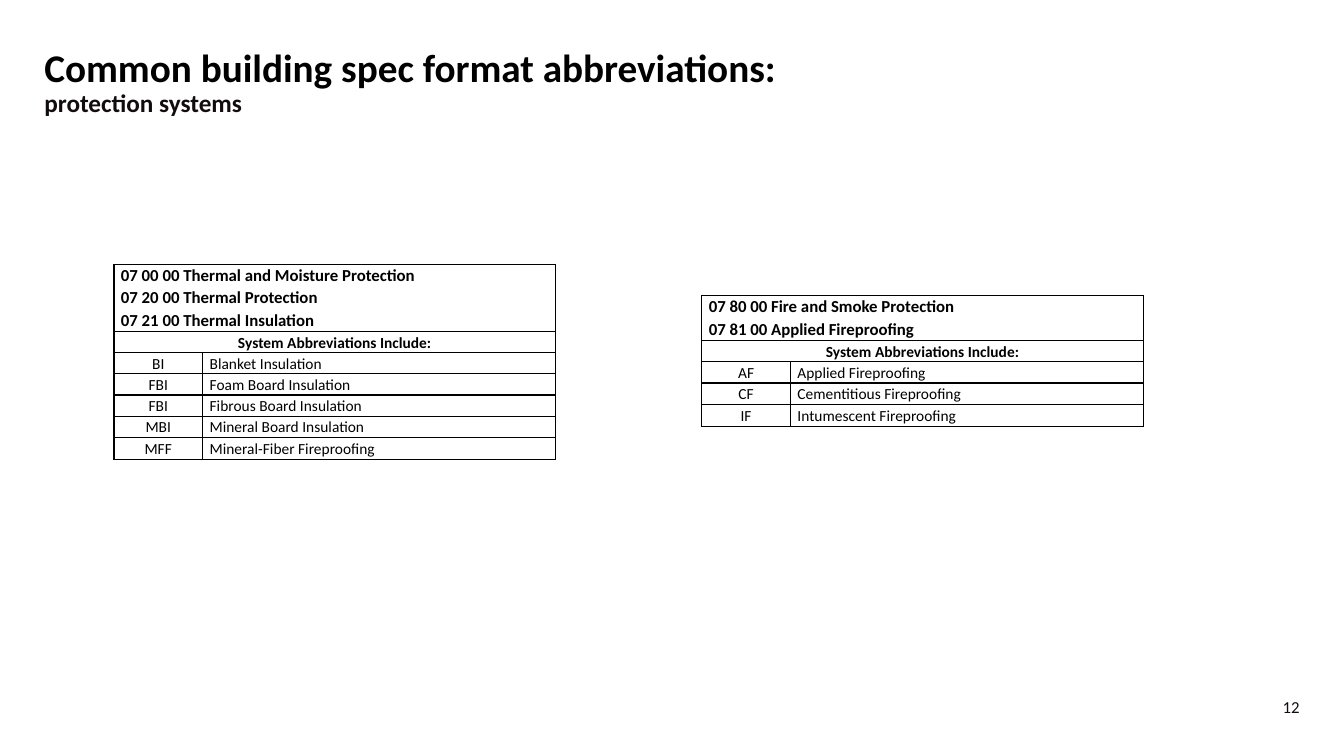
from lxml.etree import SubElement
from pptx import Presentation
from pptx.dml.color import RGBColor
from pptx.enum.text import MSO_ANCHOR as Anchor, PP_ALIGN as Align
from pptx.oxml import parse_xml
from pptx.oxml.ns import nsdecls, qn
from pptx.util import Inches, Pt

BLACK = "000000"
INK = "130C0E"


def color(hex_value):
    return RGBColor.from_string(hex_value)


class SlideBuilder:
    font_name = "Calibri"
    columns = (0.88, 3.5)
    cell_margin = 0.07

    def __init__(self, presentation):
        self.slide = presentation.slides.add_slide(presentation.slide_layouts[6])

    def run(self, paragraph, text, size, hex_value=BLACK, bold=False):
        run = paragraph.add_run()
        run.text = text
        run.font.name = self.font_name
        run.font.size = Pt(size)
        run.font.bold = bold
        run.font.color.rgb = color(hex_value)

    def text_box(self, left, top, width, height, anchor=Anchor.TOP):
        """Add an empty box without margins and return its first paragraph."""
        box = self.slide.shapes.add_textbox(
            Inches(left), Inches(top), Inches(width), Inches(height))
        frame = box.text_frame
        frame.word_wrap = True
        frame.vertical_anchor = anchor
        frame.margin_left = frame.margin_right = 0
        frame.margin_top = frame.margin_bottom = 0
        return frame.paragraphs[0]

    def title(self, heading, subheading):
        paragraph = self.text_box(0.44, 0.48, 11.75, 0.8)
        paragraph.line_spacing = 0.9
        self.run(paragraph, heading, 28, bold=True)
        paragraph.add_line_break()
        self.run(paragraph, subheading, 18, INK, bold=True)

    def page_number(self, number):
        paragraph = self.text_box(12.06, 6.94, 0.83, 0.15, Anchor.MIDDLE)
        paragraph.alignment = Align.RIGHT
        self.run(paragraph, number, 12, INK)

    def borders(self, cell, sides):
        """Draw the named sides (from "LRTB") and clear the others."""
        properties = cell._tc.get_or_add_tcPr()
        for index, side in enumerate("LRTB"):
            line = parse_xml(f'<a:ln{side} {nsdecls("a")} w="{Pt(1)}"/>')
            if side in sides:
                fill = SubElement(line, qn("a:solidFill"))
                SubElement(fill, qn("a:srgbClr"), val=BLACK)
            else:
                SubElement(line, qn("a:noFill"))
            properties.insert(index, line)

    def cell(self, cell, text, size, bold=False, align=Align.LEFT):
        cell.vertical_anchor = Anchor.MIDDLE
        cell.margin_left = cell.margin_right = Inches(self.cell_margin)
        cell.margin_top = cell.margin_bottom = 0
        paragraph = cell.text_frame.paragraphs[0]
        paragraph.alignment = align
        paragraph.line_spacing = 1.07
        self.run(paragraph, text, size, bold=bold)

    def abbreviation_table(self, left, top, sections, abbreviations):
        """Stack section titles, a caption row and abbreviation pairs."""
        caption_row = len(sections)
        heights = ([0.22] * (caption_row - 1) + [0.23]
                   + [0.21] * len(abbreviations) + [0.22])
        table = self.slide.shapes.add_table(
            len(heights), len(self.columns), Inches(left), Inches(top),
            Inches(sum(self.columns)), Inches(sum(heights))).table
        table.first_row = table.horz_banding = False
        for column, width in zip(table.columns, self.columns):
            column.width = Inches(width)
        for index, height in enumerate(heights):
            table.rows[index].height = Inches(height)
            sides = "LR"
            if index == 0 or index >= caption_row:
                sides += "T"
            if index >= caption_row - 1:
                sides += "B"
            for column in range(len(self.columns)):
                cell = table.cell(index, column)
                cell.fill.background()
                self.borders(cell, sides)
            if index <= caption_row:
                table.cell(index, 0).merge(table.cell(index, 1))

        for index, section in enumerate(sections):
            self.cell(table.cell(index, 0), section, 12, bold=True)
        self.cell(table.cell(caption_row, 0), "System Abbreviations Include:",
                  11, bold=True, align=Align.CENTER)
        for index, (short, meaning) in enumerate(abbreviations, caption_row + 1):
            self.cell(table.cell(index, 0), short, 11, align=Align.CENTER)
            self.cell(table.cell(index, 1), meaning, 11)


def main():
    presentation = Presentation()
    presentation.slide_width = Inches(13.33)
    presentation.slide_height = Inches(7.5)
    builder = SlideBuilder(presentation)
    builder.title("Common building spec format abbreviations:", "protection systems")
    builder.page_number("12")
    builder.abbreviation_table(
        1.13, 2.62,
        ["07 00 00 Thermal and Moisture Protection",
         "07 20 00 Thermal Protection",
         "07 21 00 Thermal Insulation"],
        [("BI", "Blanket Insulation"),
         ("FBI", "Foam Board Insulation"),
         ("FBI", "Fibrous Board Insulation"),
         ("MBI", "Mineral Board Insulation"),
         ("MFF", "Mineral-Fiber Fireproofing")])
    builder.abbreviation_table(
        6.96, 2.93,
        ["07 80 00 Fire and Smoke Protection",
         "07 81 00 Applied Fireproofing"],
        [("AF", "Applied Fireproofing"),
         ("CF", "Cementitious Fireproofing"),
         ("IF", "Intumescent Fireproofing")])
    presentation.save("out.pptx")


if __name__ == "__main__":
    main()
